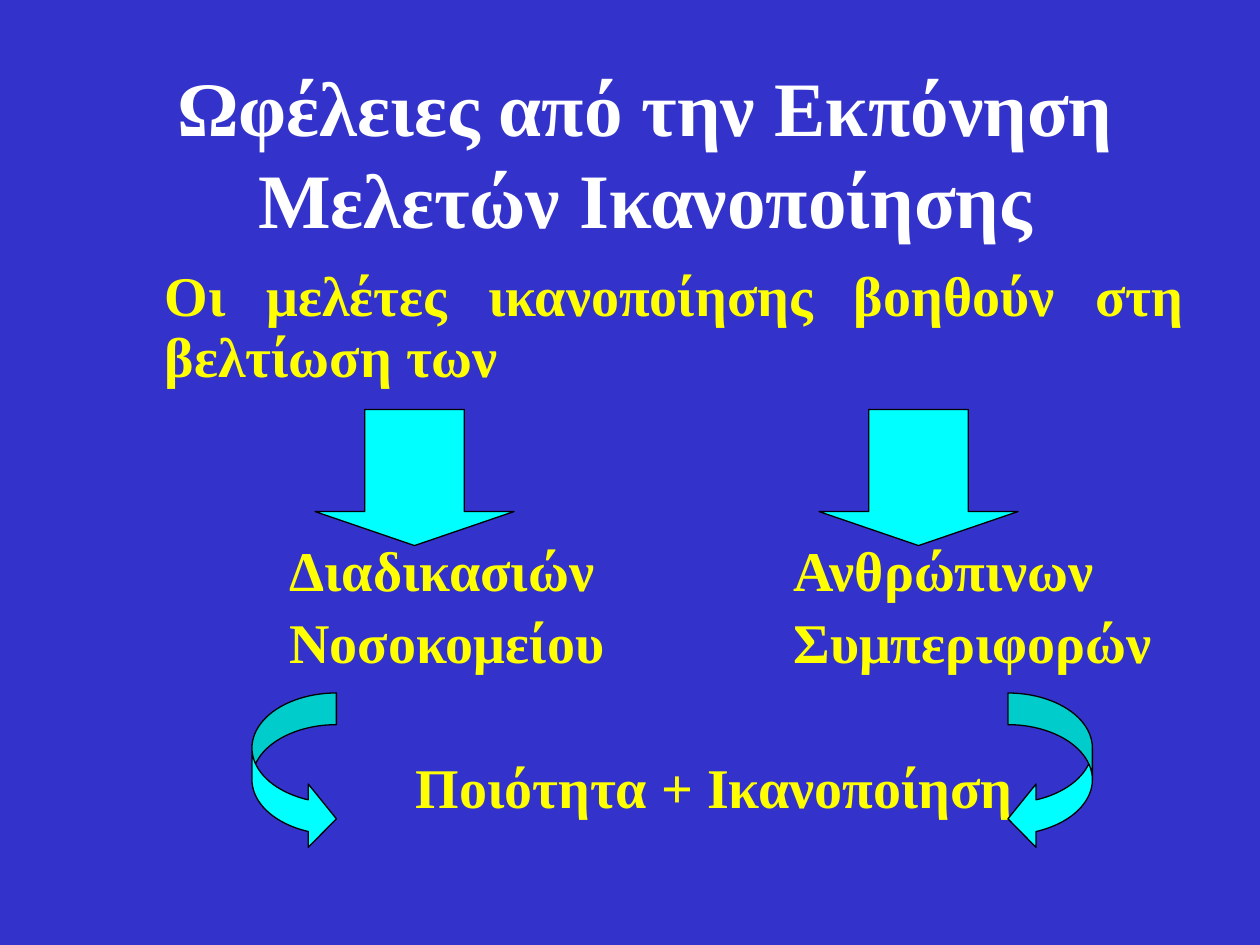
"""Build the slide on the benefits of satisfaction studies."""
from dataclasses import dataclass

from pptx import Presentation
from pptx.dml.color import RGBColor
from pptx.enum.shapes import MSO_SHAPE as Preset
from pptx.enum.text import MSO_ANCHOR as Anchor, PP_ALIGN as Align
from pptx.slide import Slide
from pptx.util import Inches, Pt


@dataclass(frozen=True)
class Theme:
    background: RGBColor = RGBColor(0x33, 0x33, 0xCC)
    title: RGBColor = RGBColor(0xFF, 0xFF, 0xFF)
    body: RGBColor = RGBColor(0xFF, 0xFF, 0x00)
    arrow: RGBColor = RGBColor(0x00, 0xFF, 0xFF)
    outline: RGBColor = RGBColor(0x00, 0x00, 0x00)
    font: str = "Times New Roman"
    title_size: float = 44
    body_size: float = 32
    outline_width: float = 0.75
    body_line_spacing: float = 0.9
    body_space_before: float = 6.4


@dataclass(frozen=True)
class Box:
    left: float
    top: float
    width: float
    height: float

    def lengths(self) -> tuple[Inches, ...]:
        return tuple(Inches(value) for value in (self.left, self.top, self.width, self.height))


@dataclass(frozen=True)
class TextBlock:
    box: Box
    lines: tuple[str, ...]
    align: Align = Align.LEFT
    is_title: bool = False


@dataclass(frozen=True)
class Arrow:
    preset: Preset
    box: Box
    adjustments: tuple[float, ...]


THEME = Theme()
COLUMN_LEFTS = (2.2, 6.2)
COLUMN_LINES = (("Διαδικασιών", "Νοσοκομείου"), ("Ανθρώπινων", "Συμπεριφορών"))

TEXT_BLOCKS = [
    TextBlock(Box(0.75, 0.33, 8.75, 1.75), ("Ωφέλειες από την Εκπόνηση Μελετών Ικανοποίησης",),
              Align.CENTER, is_title=True),
    TextBlock(Box(1.21, 2.08, 8.29, 1.1), ("Οι μελέτες ικανοποίησης βοηθούν στη βελτίωση των",),
              Align.JUSTIFY),
    *(TextBlock(Box(left, 4.26, 3.3, 1.2), lines)
      for left, lines in zip(COLUMN_LEFTS, COLUMN_LINES)),
    TextBlock(Box(3.2, 5.98, 5.2, 0.65), ("Ποιότητα + Ικανοποίηση",)),
]

ARROWS = [
    *(Arrow(Preset.DOWN_ARROW, Box(left + 0.3, 3.25, 1.58, 1.08), (0.5, 0.25))
      for left in COLUMN_LEFTS),
    *(Arrow(preset, Box(left, 5.5, 0.67, 1.25), (0.375, 0.75, 0.333))
      for preset, left in ((Preset.CURVED_RIGHT_ARROW, 2), (Preset.CURVED_LEFT_ARROW, 8))),
]


def add_text(slide: Slide, block: TextBlock) -> None:
    frame = slide.shapes.add_textbox(*block.box.lengths()).text_frame
    frame.word_wrap = True
    frame.vertical_anchor = Anchor.MIDDLE if block.is_title else Anchor.TOP
    frame.text = "\n".join(block.lines)
    for paragraph in frame.paragraphs:
        paragraph.alignment = block.align
        paragraph.font.name = THEME.font
        paragraph.font.bold = True
        paragraph.font.size = Pt(THEME.title_size if block.is_title else THEME.body_size)
        paragraph.font.color.rgb = THEME.title if block.is_title else THEME.body
        if not block.is_title:
            paragraph.line_spacing = THEME.body_line_spacing
            paragraph.space_before = Pt(THEME.body_space_before)


def add_arrow(slide: Slide, arrow: Arrow) -> None:
    shape = slide.shapes.add_shape(arrow.preset, *arrow.box.lengths())
    for index, value in enumerate(arrow.adjustments):
        shape.adjustments[index] = value
    shape.shadow.inherit = False
    shape.fill.solid()
    shape.fill.fore_color.rgb = THEME.arrow
    shape.line.color.rgb = THEME.outline
    shape.line.width = Pt(THEME.outline_width)


def main() -> None:
    presentation = Presentation()
    presentation.slide_width = Inches(10)
    presentation.slide_height = Inches(7.5)
    slide = presentation.slides.add_slide(presentation.slide_layouts[6])
    slide.background.fill.solid()
    slide.background.fill.fore_color.rgb = THEME.background
    for block in TEXT_BLOCKS:
        add_text(slide, block)
    for arrow in ARROWS:
        add_arrow(slide, arrow)
    presentation.save("out.pptx")


if __name__ == "__main__":
    main()
